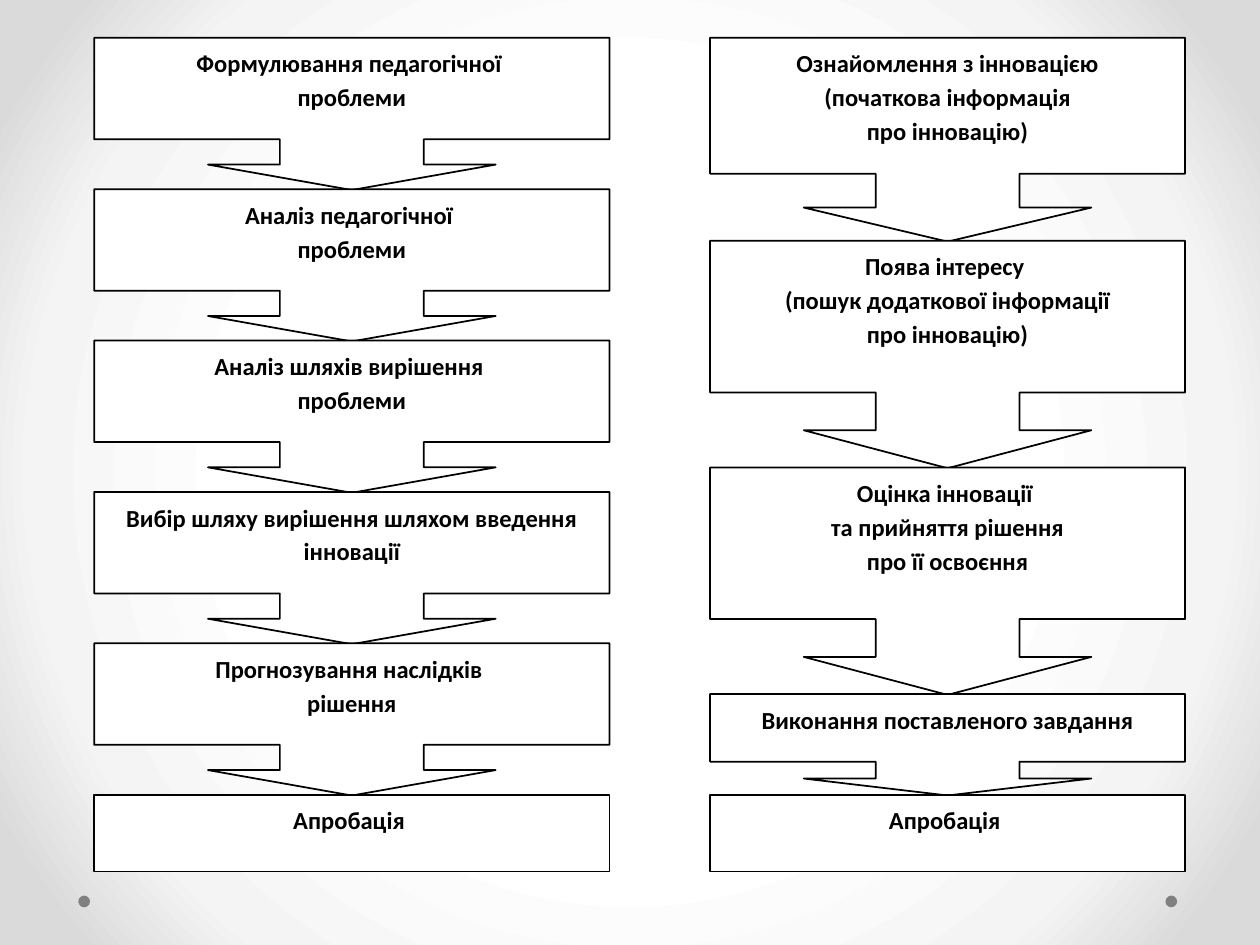
from pptx import Presentation
from pptx import util as u
from pptx.dml.color import RGBColor
from pptx.enum import shapes, text
from pptx.oxml import parse_xml
from pptx.oxml.ns import nsdecls

TOP = 21.6
OVERLAP = 0.5
LAST_HEIGHT = 44
ARROW_WIDTH = 82.2

# Each step: text and distance to the next step
PROBLEM_STEPS = [(label, 86.5) for label in (
    "Формулювання педагогічної \nпроблеми",
    "Аналіз педагогічної \nпроблеми",
    "Аналіз шляхів вирішення \nпроблеми",
    "Вибір шляху вирішення шляхом введення інновації",
    "Прогнозування наслідків \nрішення",
)]
INNOVATION_STEPS = [
    ("Ознайомлення з інновацією\n(початкова інформація\nпро інновацію)", 116),
    ("Поява інтересу \n(пошук додаткової інформації\nпро інновацію)", 129.5),
    ("Оцінка інновації \nта прийняття рішення\nпро її освоєння", 129.5),
    ("Виконання поставленого завдання", 57.5),
]
FINAL_STEP = "Апробація "


def color(value):
    return RGBColor.from_string(value)


class FlowSlide:
    font = "Calibri"
    size = 14
    ink = "000000"
    paper = "FFFFFF"
    dot_color = "808080"

    def __init__(self, slide):
        self.slide = slide

    def background(self, stops):
        self.slide.background.fill.gradient()
        gradient = self.slide.element.xpath(".//p:bgPr/a:gradFill")[0]
        stop_xml = "".join(
            f'<a:gs pos="{percent * 1000}"><a:srgbClr val="{value}"/></a:gs>'
            for percent, value in stops)
        gradient.getparent().replace(gradient, parse_xml(
            f'<a:gradFill {nsdecls("a")} rotWithShape="1"><a:gsLst>{stop_xml}</a:gsLst>'
            '<a:path path="circle"><a:fillToRect l="50000" t="50000" r="50000" b="50000"/>'
            '</a:path></a:gradFill>'))

    def add(self, parent, kind, left, top, width, height, fill):
        shape = parent.add_shape(kind, u.Pt(left), u.Pt(top), u.Pt(width), u.Pt(height))
        shape.shadow.inherit = False
        shape.fill.solid()
        shape.fill.fore_color.rgb = color(fill)
        return shape

    def dot(self, left):
        shape = self.add(self.slide.shapes, shapes.MSO_SHAPE.OVAL,
                         left, 511.8, 6.7, 6.7, self.dot_color)
        shape.line.fill.background()

    def box(self, parent, kind, label, left, top, width, height):
        shape = self.add(parent, kind, left, top, width, height, self.paper)
        shape.line.color.rgb = color(self.ink)
        shape.line.width = u.Pt(1)
        frame = shape.text_frame
        frame.word_wrap = True
        frame.vertical_anchor = text.MSO_ANCHOR.TOP
        paragraph = frame.paragraphs[0]
        paragraph.text = label
        paragraph.alignment = text.PP_ALIGN.CENTER
        paragraph.line_spacing = 1.15
        paragraph.space_after = u.Pt(10)
        for run in paragraph.runs:
            run.font.name = self.font
            run.font.size = u.Pt(self.size)
            run.font.bold = True
            run.font.color.rgb = color(self.ink)
        return shape

    def callout(self, parent, label, left, top, width, height):
        shape = self.box(parent, shapes.MSO_SHAPE.DOWN_ARROW_CALLOUT,
                         label, left, top, width, height)
        # The arrow keeps one width whatever the height of its box
        ratio = ARROW_WIDTH / min(width, height)
        for index, value in enumerate((ratio, ratio, 0.167, 0.667)):
            shape.adjustments[index] = value

    def column(self, steps, left, width):
        parent = self.slide.shapes.add_group_shape().shapes
        top = TOP
        for label, pitch in steps:
            self.callout(parent, label, left, top, width, pitch + OVERLAP)
            top += pitch
        self.box(parent, shapes.MSO_SHAPE.RECTANGLE, FINAL_STEP,
                 left, top, width, LAST_HEIGHT)


def main():
    presentation = Presentation()
    presentation.slide_width, presentation.slide_height = u.Pt(720), u.Pt(540)
    flow = FlowSlide(presentation.slides.add_slide(presentation.slide_layouts[6]))

    # Backdrop
    flow.background([(50, "FFFFFF"), (76, "F4F4F4"), (92, "DADADA")])
    for left in (666, 44.8):
        flow.dot(left)

    # Two parallel processes
    flow.column(PROBLEM_STEPS, 53.8, 294.5)
    flow.column(INNOVATION_STEPS, 405.8, 271.4)

    presentation.save("out.pptx")


if __name__ == "__main__":
    main()
